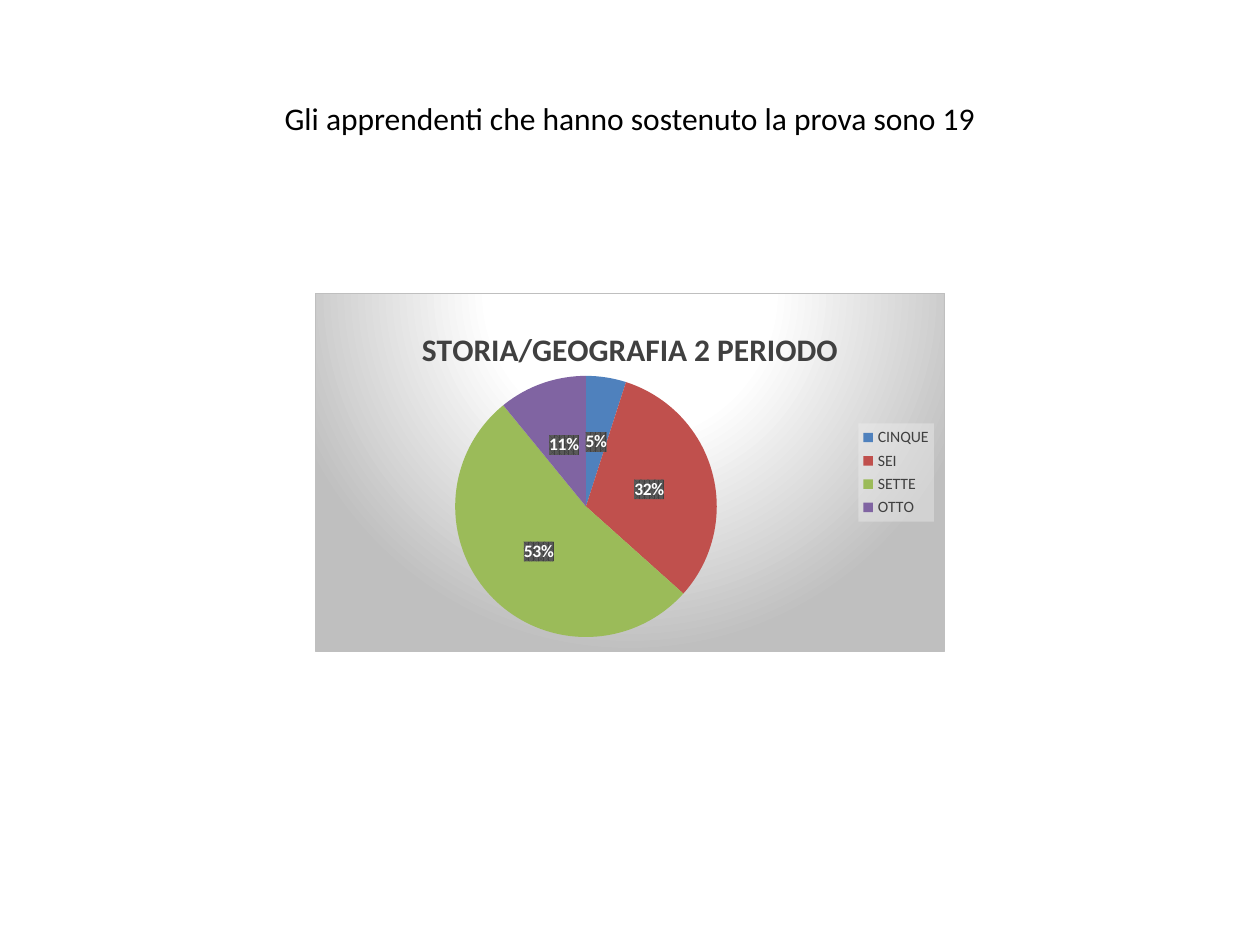
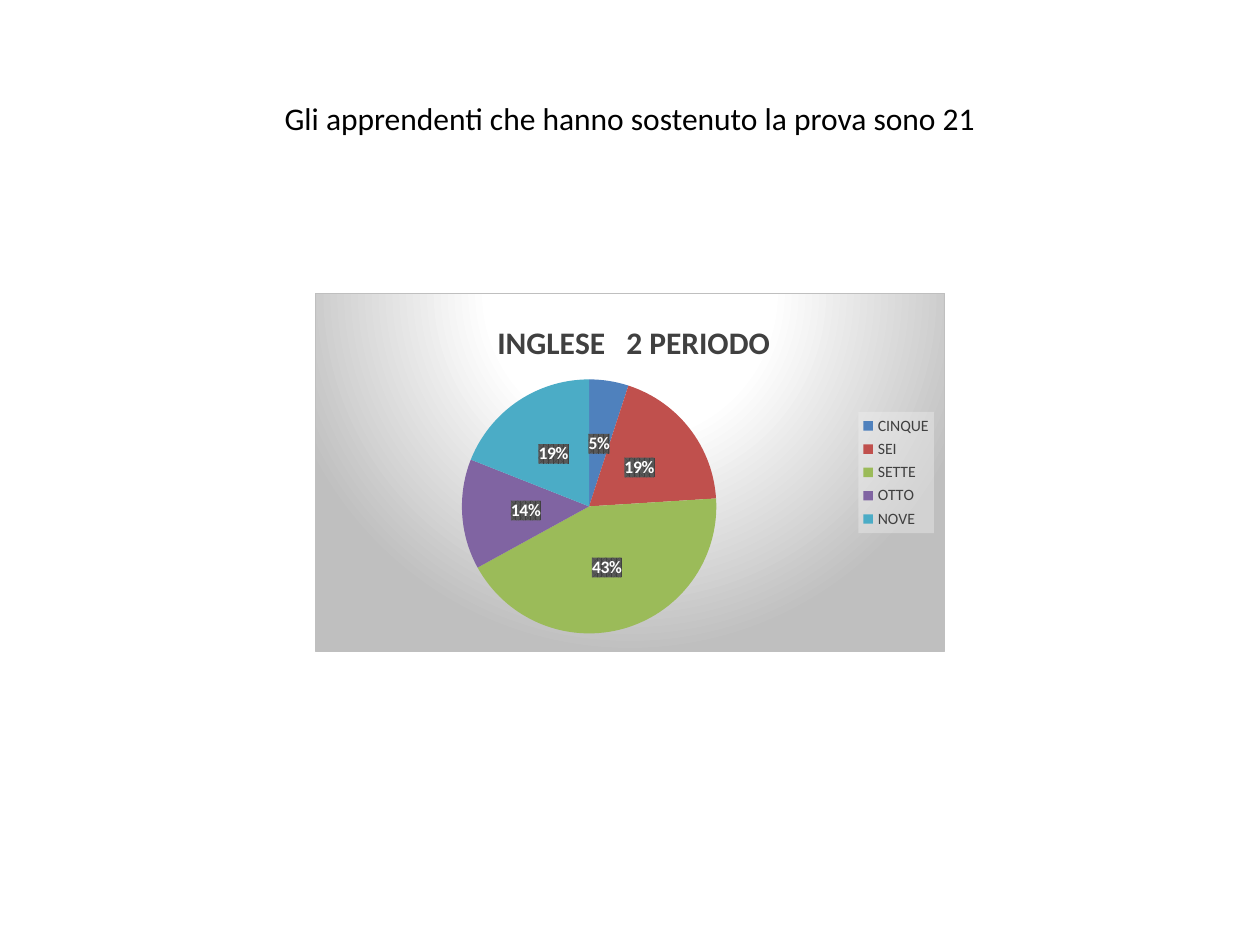
from dataclasses import dataclass
from typing import Any

from lxml.etree import fromstring
from pptx import Presentation
from pptx.chart.data import CategoryChartData as Data
from pptx.dml.color import RGBColor as Rgb
from pptx.enum.chart import XL_CHART_TYPE as Kind
from pptx.enum.chart import XL_LABEL_POSITION as Spot
from pptx.enum.chart import XL_LEGEND_POSITION as Side
from pptx.enum.text import MSO_ANCHOR as Anchor
from pptx.enum.text import PP_ALIGN as Align
from pptx.oxml.ns import qn
from pptx.util import Inches, Pt

WIDE, HIGH = Inches(10), Inches(7.5)
NS = ('xmlns:a="http://schemas.openxmlformats.org/drawingml/2006/main" '
      'xmlns:c="http://schemas.openxmlformats.org/drawingml/2006/chart"')
HUES = {
    "ink": "000000", "dark": "404040", "mid": "595959", "white": "FFFFFF",
    "grey": "BFBFBF", "pale": "F2F2F2",
    "CINQUE": "4F81BD", "SEI": "C0504D", "SETTE": "9BBB59",
    "OTTO": "8064A2", "NOVE": "4BACC6",
}
FONTS = {
    "head": {"name": "Calibri", "size": Pt(18), "bold": False},
    "name": {"name": "Calibri", "size": Pt(18), "bold": True},
    "base": {"name": "Calibri", "size": Pt(10)},
    "key": {"name": "Calibri", "size": Pt(9)},
    "mark": {"name": "Calibri", "size": Pt(10), "bold": True},
}
# Left, top, width and height as shares of the slide
HEAD_BOX = (0.05, 0.04, 0.9, 0.17)
PIE_BOX = (0.25, 0.31, 0.5, 0.38)


@dataclass(frozen=True)
class Test:
    head: str
    name: str
    marks: dict[str, int]
    name_at: tuple[float, float]          # shares of the chart
    pie_at: tuple[float, float, float, float]


TESTS = [
    Test("Gli apprendenti che hanno sostenuto la prova sono 19",
         "STORIA/GEOGRAFIA 2 PERIODO",
         {"CINQUE": 5, "SEI": 32, "SETTE": 53, "OTTO": 11},
         (0.16, 0.08), (0.22, 0.23, 0.42, 0.73)),
    Test("Gli apprendenti che hanno sostenuto la prova sono 21",
         "INGLESE   2 PERIODO",
         {"CINQUE": 5, "SEI": 19, "SETTE": 43, "OTTO": 14, "NOVE": 19},
         (0.28, 0.06), (0.23, 0.24, 0.41, 0.71)),
]


def place(box: tuple[float, ...]) -> list[int]:
    return [round(share * full) for share, full in zip(box, (WIDE, HIGH) * 2)]


def style(font: Any, role: str, hue: str) -> None:
    for key, value in FONTS[role].items():
        setattr(font, key, value)
    font.color.rgb = Rgb.from_string(HUES[hue])


def tint(hue: str, extra: str = "") -> str:
    return f'<a:srgbClr val="{HUES[hue]}">{extra}</a:srgbClr>'


def paint(body: str) -> Any:
    return fromstring(f"<c:spPr {NS}>{body}</c:spPr>")


def layout(box: tuple[float, ...], inner: bool = False) -> Any:
    target = '<c:layoutTarget val="inner"/>' if inner else ""
    modes = "".join(f'<c:{axis}Mode val="edge"/>' for axis in "xy")
    sizes = "".join(f'<c:{key} val="{share}"/>' for key, share in zip("xywh", box))
    return fromstring(f"<c:layout {NS}><c:manualLayout>{target}{modes}{sizes}"
                      "</c:manualLayout></c:layout>")


def drop(node: Any, tag: str) -> None:
    for old in node.findall(qn(tag)):
        node.remove(old)


# Radial grey backdrop with a thin border
def back(chart: Any) -> None:
    stops = "".join(f'<a:gs pos="{at * 1000}">{tint(hue)}</a:gs>'
                    for at, hue in ((0, "white"), (39, "white"), (100, "grey")))
    fill = (f'<a:gradFill><a:gsLst>{stops}</a:gsLst><a:path path="circle">'
            '<a:fillToRect l="50000" t="-80000" r="50000" b="180000"/>'
            "</a:path></a:gradFill>")
    line = f'<a:ln w="{Pt(0.75)}"><a:solidFill>{tint("grey")}</a:solidFill></a:ln>'
    root = chart._chartSpace
    drop(root, "c:spPr")
    root.find(qn("c:chart")).addnext(paint(fill + line))


def name_pie(chart: Any, test: Test) -> None:
    chart.has_title = True
    frame = chart.chart_title.text_frame
    frame.text = test.name
    style(frame.paragraphs[0].runs[0].font, "name", "dark")
    node = chart._chartSpace.find(".//" + qn("c:title"))
    drop(node, "c:layout")
    node.find(qn("c:tx")).addnext(layout(test.name_at))


def add_key(chart: Any) -> None:
    chart.has_legend = True
    key = chart.legend
    key.position = Side.RIGHT
    key.include_in_layout = False
    style(key.font, "key", "dark")
    fill = tint("pale", '<a:alpha val="39000"/>')
    node = chart._chartSpace.find(".//" + qn("c:legend"))
    node.find(qn("c:txPr")).addprevious(
        paint(f"<a:solidFill>{fill}</a:solidFill>"))


def add_marks(series: Any) -> None:
    marks = series.data_labels
    flags = {"show_value": True, "number_format": '0"%"',
             "number_format_is_linked": False, "position": Spot.CENTER}
    for key, value in flags.items():
        setattr(marks, key, value)
    style(marks.font, "mark", "white")
    fill = (f'<a:pattFill prst="pct75"><a:fgClr>{tint("dark")}</a:fgClr>'
            f'<a:bgClr>{tint("mid")}</a:bgClr></a:pattFill>')
    node = marks._element
    node.find(qn("c:txPr")).addprevious(paint(fill))


def add_pie(slide: Any, test: Test) -> None:
    data = Data()
    data.categories = list(test.marks)
    data.add_series("Series 1", list(test.marks.values()))
    chart = slide.shapes.add_chart(Kind.PIE, *place(PIE_BOX), data).chart
    style(chart.font, "base", "ink")
    back(chart)
    name_pie(chart, test)
    add_key(chart)
    plot = chart.plots[0]
    plot.vary_by_categories = True
    series = plot.series[0]
    for spot, grade in enumerate(test.marks):
        fill = series.points[spot].format.fill
        fill.solid()
        fill.fore_color.rgb = Rgb.from_string(HUES[grade])
    add_marks(series)
    area = chart._chartSpace.find(".//" + qn("c:plotArea"))
    drop(area, "c:layout")
    area.insert(0, layout(test.pie_at, inner=True))


def add_head(slide: Any, text: str) -> None:
    frame = slide.shapes.add_textbox(*place(HEAD_BOX)).text_frame
    frame.word_wrap = True
    frame.vertical_anchor = Anchor.MIDDLE
    line = frame.paragraphs[0]
    line.alignment = Align.CENTER
    run = line.add_run()
    run.text = text
    style(run.font, "head", "ink")


def main() -> None:
    deck = Presentation()
    deck.slide_width, deck.slide_height = WIDE, HIGH
    for test in TESTS:
        slide = deck.slides.add_slide(deck.slide_layouts[6])
        add_head(slide, test.head)
        add_pie(slide, test)
    deck.save("out.pptx")


if __name__ == "__main__":
    main()
